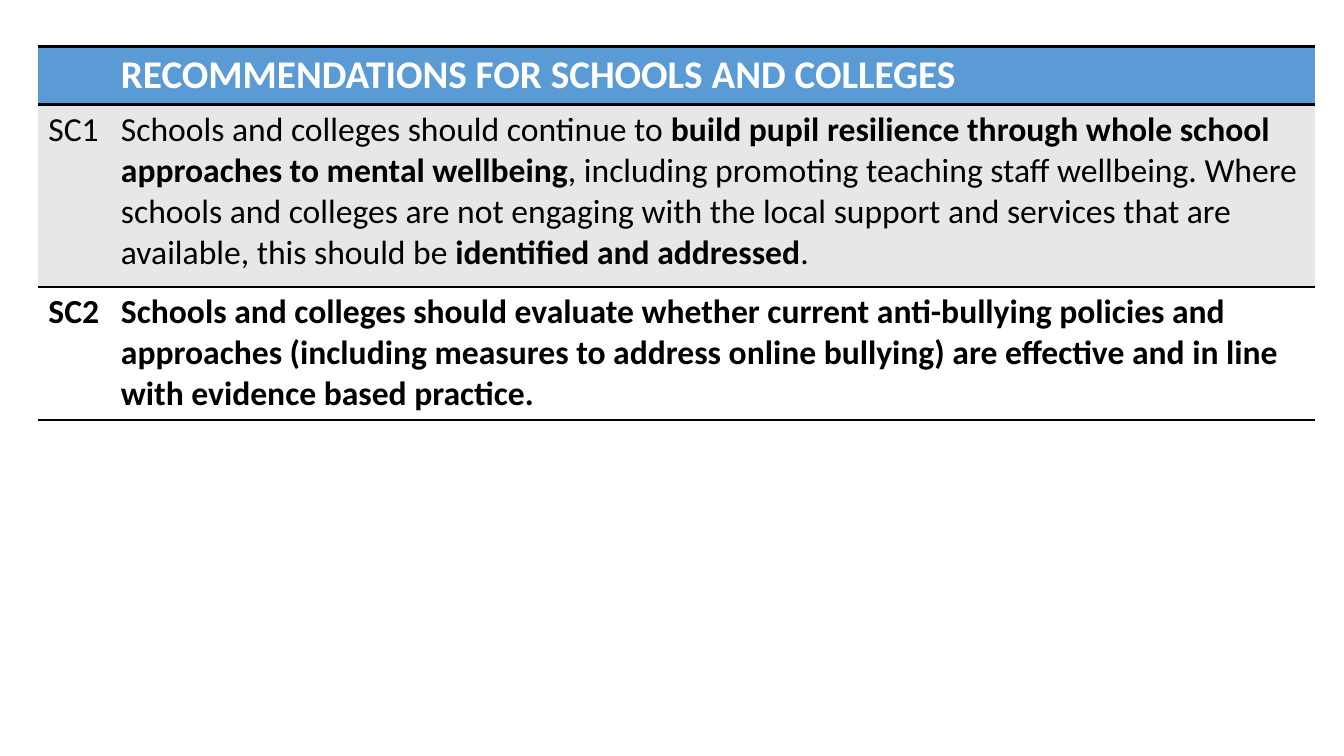
"""Build the slide with the recommendations for schools and colleges."""
from lxml import etree
from pptx import Presentation
from pptx.dml.color import RGBColor
from pptx.oxml import ns
from pptx.util import Inches, Pt

BLUE = RGBColor(0x5B, 0x9B, 0xD5)
GREY = RGBColor(0xE7, 0xE7, 0xE7)
WHITE = RGBColor(0xFF, 0xFF, 0xFF)
BLACK = RGBColor(0x00, 0x00, 0x00)
NO_STYLE_NO_GRID = "{2D5ABB26-0587-4C30-8999-92F81FD0307C}"

COLUMN_WIDTHS = [0.72, 11.94]
ROWS = [
    dict(height=0.57, fill=BLUE, color=WHITE, size=28, borders=["lnT", "lnB"], cells=[
        [],
        [("RECOMMENDATIONS FOR SCHOOLS AND COLLEGES", True)],
    ]),
    dict(height=1.81, fill=GREY, color=BLACK, size=24, borders=["lnT"], cells=[
        [("SC1", False)],
        [("Schools and colleges should continue to ", False),
         ("build pupil resilience through whole school approaches to mental wellbeing", True),
         (", including promoting teaching staff wellbeing. Where schools and colleges are not "
          "engaging with the local support and services that are available, this should be ", False),
         ("identified and addressed", True),
         (".", False)],
    ]),
    dict(height=1.32, fill=WHITE, color=BLACK, size=24, borders=["lnB"], cells=[
        [("SC2", True)],
        [("Schools and colleges should evaluate whether current anti-bullying policies and "
          "approaches (including measures to address online bullying) are effective and in line "
          "with evidence based practice.", True)],
    ]),
]


def add_border(cell, side, position):
    line = etree.Element(ns.qn(f"a:{side}"), w=str(Pt(2)))
    fill = etree.SubElement(line, ns.qn("a:solidFill"))
    etree.SubElement(fill, ns.qn("a:srgbClr"), val=str(BLACK))
    cell._tc.get_or_add_tcPr().insert(position, line)


presentation = Presentation()
presentation.slide_width = Inches(13.33)
presentation.slide_height = Inches(7.5)
slide = presentation.slides.add_slide(presentation.slide_layouts[6])

frame = slide.shapes.add_table(
    len(ROWS), len(COLUMN_WIDTHS), Inches(0.38), Inches(0.46),
    Inches(sum(COLUMN_WIDTHS)), Inches(sum(row["height"] for row in ROWS)))
table = frame.table
table.horz_banding = False
table._tbl.tblPr.find(ns.qn("a:tableStyleId")).text = NO_STYLE_NO_GRID

for column, width in zip(table.columns, COLUMN_WIDTHS):
    column.width = Inches(width)

for table_row, row in zip(table.rows, ROWS):
    table_row.height = Inches(row["height"])
    for cell, pieces in zip(table_row.cells, row["cells"]):
        cell.fill.solid()
        cell.fill.fore_color.rgb = row["fill"]
        for position, side in enumerate(row["borders"]):
            add_border(cell, side, position)
        paragraph = cell.text_frame.paragraphs[0]
        for words, bold in pieces:
            run = paragraph.add_run()
            run.text = words
            run.font.name = "Calibri"
            run.font.size = Pt(row["size"])
            run.font.bold = bold
            run.font.color.rgb = row["color"]

presentation.save("out.pptx")
